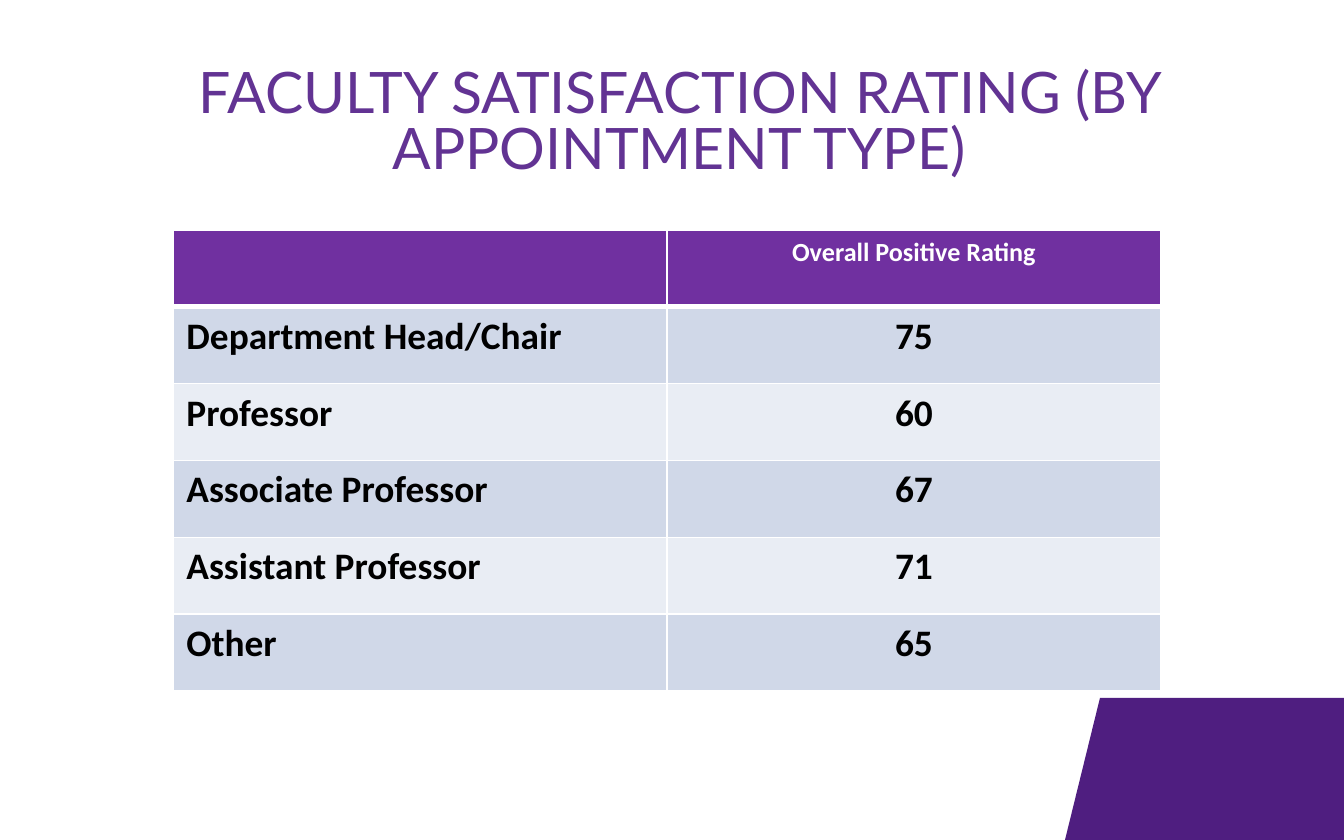
from lxml.etree import SubElement
from pptx import Presentation
from pptx.dml.color import RGBColor
from pptx.enum.text import MSO_ANCHOR as Anchor, PP_ALIGN as Align
from pptx.oxml.ns import qn
from pptx.util import Emu, Pt

SCALE = 914400 / 134.4
COLORS = {
    "title": "623393",
    "corner": "4F1E80",
    "header": "7030A0",
    "odd": "D0D8E8",
    "even": "E9EDF4",
    "white": "FFFFFF",
    "black": "000000",
}
RATINGS = [
    ("", "Overall Positive Rating"),
    ("Department Head/Chair", "75"),
    ("Professor", "60"),
    ("Associate Professor", "67"),
    ("Assistant Professor", "71"),
    ("Other", "65"),
]
TITLE_FONT = {"name": "Lato", "size": Pt(30.6), "bold": False}
HEADER_FONT = {"name": "Calibri", "size": Pt(14), "bold": True}
BODY_FONT = {"name": "Calibri", "size": Pt(20), "bold": True}


def px(length):
    return Emu(round(length * SCALE))


def color(key):
    return RGBColor.from_string(COLORS[key])


def set_attributes(target, values):
    for key, value in values.items():
        setattr(target, key, value)


def write(paragraph, text, font, color_key, align):
    paragraph.alignment = align
    run = paragraph.add_run()
    run.text = text
    set_attributes(run.font, font)
    run.font.color.rgb = color(color_key)


def add_corner(slide, left, top, width, height):
    slant = 35
    builder = slide.shapes.build_freeform(left + slant, top, scale=SCALE)
    builder.add_line_segments([
        (left + width, top),
        (left + width, top + height),
        (left, top + height),
    ])
    corner = builder.convert_to_shape()
    corner.shadow.inherit = False
    corner.fill.solid()
    corner.fill.fore_color.rgb = color("corner")
    corner.line.fill.background()


def add_title(slide, left, top, width, height):
    title = slide.shapes.add_textbox(*map(px, (left, top, width, height)))
    frame = title.text_frame
    set_attributes(frame, {
        "word_wrap": True,
        "vertical_anchor": Anchor.MIDDLE,
        "margin_top": 0,
        "margin_bottom": px(56),
    })
    heading = frame.paragraphs[0]
    heading.line_spacing = Pt(30)
    write(heading, "FACULTY SATISFACTION RATING (BY APPOINTMENT TYPE)",
          TITLE_FONT, "title", Align.CENTER)


def add_borders(cell, widths):
    properties = cell._tc.get_or_add_tcPr()
    for side, points in widths.items():
        border = SubElement(properties, qn(f"a:ln{side}"), w=str(Pt(points)))
        solid = SubElement(border, qn("a:solidFill"))
        SubElement(solid, qn("a:srgbClr"), val=COLORS["white"])


def add_ratings(slide, left, top, width, height):
    box = map(px, (left, top, width, height))
    ratings = slide.shapes.add_table(len(RATINGS), 2, *box).table
    for row, texts in enumerate(RATINGS):
        ratings.rows[row].height = px(height / len(RATINGS))
        is_header = row == 0
        band = "header" if is_header else "odd" if row % 2 else "even"
        font = HEADER_FONT if is_header else BODY_FONT
        ink = "white" if is_header else "black"
        borders = {"L": 1, "R": 1, "T": 3 if row == 1 else 1, "B": 3 if is_header else 1}
        for column, text in enumerate(texts):
            cell = ratings.cell(row, column)
            add_borders(cell, borders)
            cell.fill.solid()
            cell.fill.fore_color.rgb = color(band)
            if text:
                align = Align.CENTER if column else Align.LEFT
                write(cell.text_frame.paragraphs[0], text, font, ink, align)


def main():
    deck = Presentation()
    set_attributes(deck, {"slide_width": px(1344), "slide_height": px(840)})
    slide = deck.slides.add_slide(deck.slide_layouts[6])
    add_corner(slide, 1065, 698, 279, 142)
    add_title(slide, 54, 75, 1250, 155)
    add_ratings(slide, 173, 230, 988, 461)
    deck.save("out.pptx")


if __name__ == "__main__":
    main()
